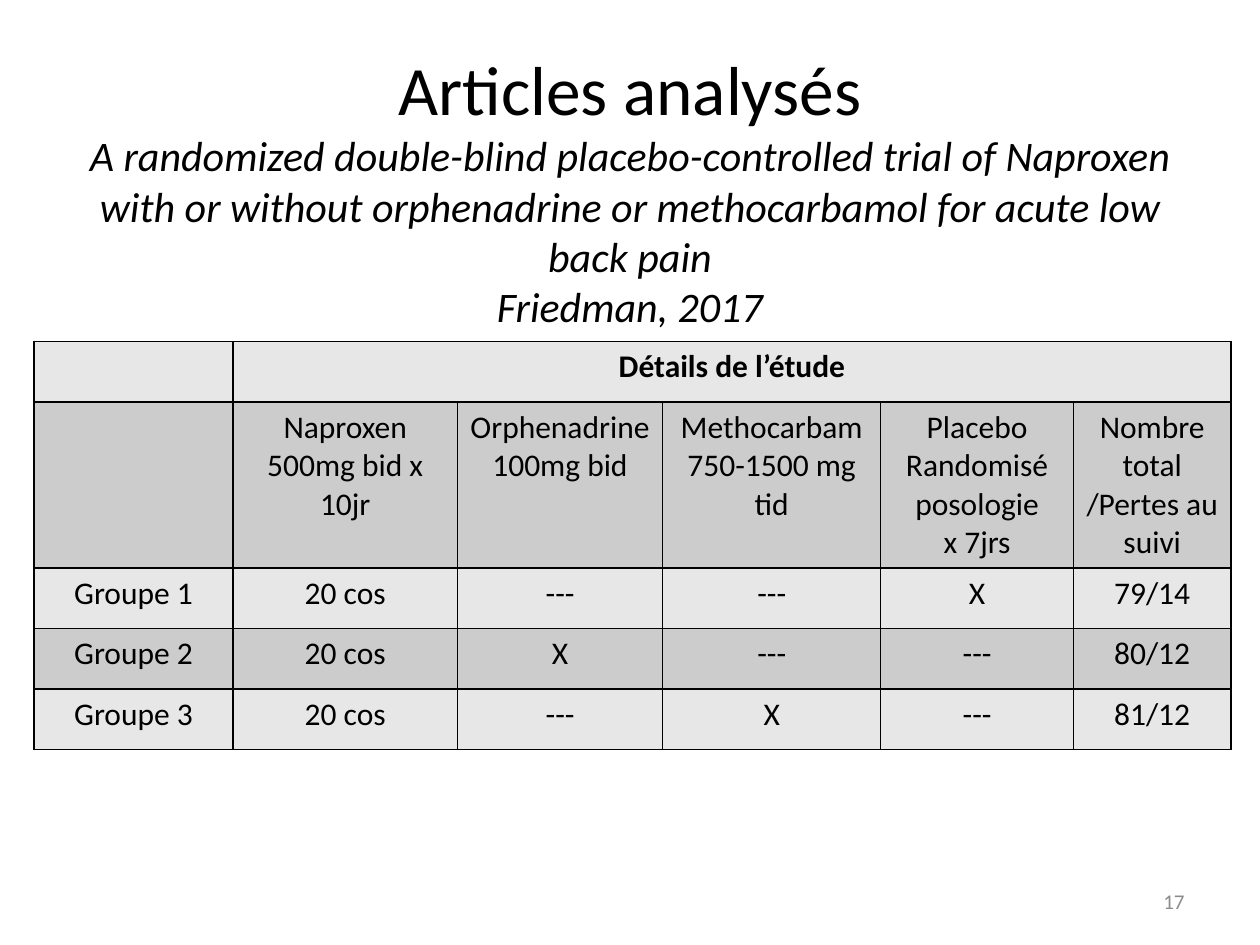
from dataclasses import dataclass
from lxml.etree import SubElement
from pptx import Presentation
from pptx.dml.color import RGBColor as Rgb
from pptx.enum.text import MSO_ANCHOR as Anchor, PP_ALIGN as Align
from pptx.oxml.ns import qn
from pptx.util import Inches, Pt


@dataclass(frozen=True)
class Theme:
    font: str = "Calibri"
    ink: str = "000000"
    muted: str = "8C8C8C"
    light: str = "E7E7E7"
    dark: str = "CCCCCC"
    title: float = 39.6
    sub: float = 24
    body: float = 18
    foot: float = 12
    rule: float = 1


THEME = Theme()
TITLE = "Articles analysés"
STUDY = (
    "A randomized double-blind placebo-controlled trial of Naproxen "
    "with or without orphenadrine or methocarbamol for acute low back pain"
)
CITE = "Friedman, 2017"
WIDTHS = [1.58, 1.78, 1.63, 1.73, 1.53, 1.25]
HEIGHTS = [0.48, 1.32, 0.48, 0.48, 0.48]
ROWS = [
    ["", "Détails de l’étude", "", "", "", ""],
    [
        "",
        "Naproxen 500mg bid x 10jr",
        "Orphenadrine\n100mg bid",
        "Methocarbam 750-1500 mg tid",
        "Placebo\nRandomisé\nposologie\nx 7jrs",
        "Nombre total /Pertes au suivi",
    ],
    ["Groupe 1", "20 cos", "---", "---", "X", "79/14"],
    ["Groupe 2", "20 cos", "X", "---", "---", "80/12"],
    ["Groupe 3", "20 cos", "---", "X", "---", "81/12"],
]


def style(par, size, color=THEME.ink, align=Align.CENTER, bold=False, italic=False):
    par.alignment = align
    font = par.font
    font.name, font.size = THEME.font, Pt(size)
    font.bold, font.italic = bold, italic
    font.color.rgb = Rgb.from_string(color)
    for run in par.runs:
        run.font.name, run.font.size = THEME.font, Pt(size)
        run.font.bold, run.font.italic = bold, italic
        run.font.color.rgb = Rgb.from_string(color)


def add_text(slide, box, text):
    frame = slide.shapes.add_textbox(*map(Inches, box)).text_frame
    frame.word_wrap = True
    frame.vertical_anchor = Anchor.MIDDLE
    frame.text = text
    return frame


def add_title(slide):
    frame = add_text(slide, (0.5, 0.64, 9, 2.07), "\n".join([TITLE, STUDY, CITE]))
    frame.margin_bottom = Inches(0.4)
    head, *rest = frame.paragraphs
    style(head, THEME.title)
    for par in rest:
        style(par, THEME.sub, italic=True)


def add_page(slide, text):
    frame = add_text(slide, (7.17, 6.95, 2.33, 0.4), text)
    style(frame.paragraphs[0], THEME.foot, THEME.muted, Align.RIGHT)


def set_edges(cell):
    props = cell._tc.get_or_add_tcPr()
    for side in ("a:lnL", "a:lnR", "a:lnT", "a:lnB"):
        line = SubElement(props, qn(side), w=str(Pt(THEME.rule)))
        fill = SubElement(line, qn("a:solidFill"))
        SubElement(fill, qn("a:srgbClr"), val=THEME.ink)


def set_cell(cell, text, fill, bold):
    cell.text_frame.text = text
    for par in cell.text_frame.paragraphs:
        style(par, THEME.body, bold=bold)
    set_edges(cell)
    cell.fill.solid()
    cell.fill.fore_color.rgb = Rgb.from_string(fill)


def add_grid(slide):
    box = (0.27, 2.71, sum(WIDTHS), sum(HEIGHTS))
    table = slide.shapes.add_table(
        len(ROWS), len(WIDTHS), *map(Inches, box)
    ).table
    for col, width in zip(table.columns, WIDTHS):
        col.width = Inches(width)
    for row, high in zip(table.rows, HEIGHTS):
        row.height = Inches(high)
    for i, row in enumerate(ROWS):
        fill = THEME.dark if i % 2 else THEME.light
        for j, text in enumerate(row):
            set_cell(table.cell(i, j), text, fill, i == 0)
    table.cell(0, 1).merge(table.cell(0, len(WIDTHS) - 1))


def main():
    deck = Presentation()
    deck.slide_width, deck.slide_height = Inches(10), Inches(7.5)
    slide = deck.slides.add_slide(deck.slide_layouts[6])
    add_title(slide)
    add_page(slide, "17")
    add_grid(slide)
    deck.save("out.pptx")


if __name__ == "__main__":
    main()
